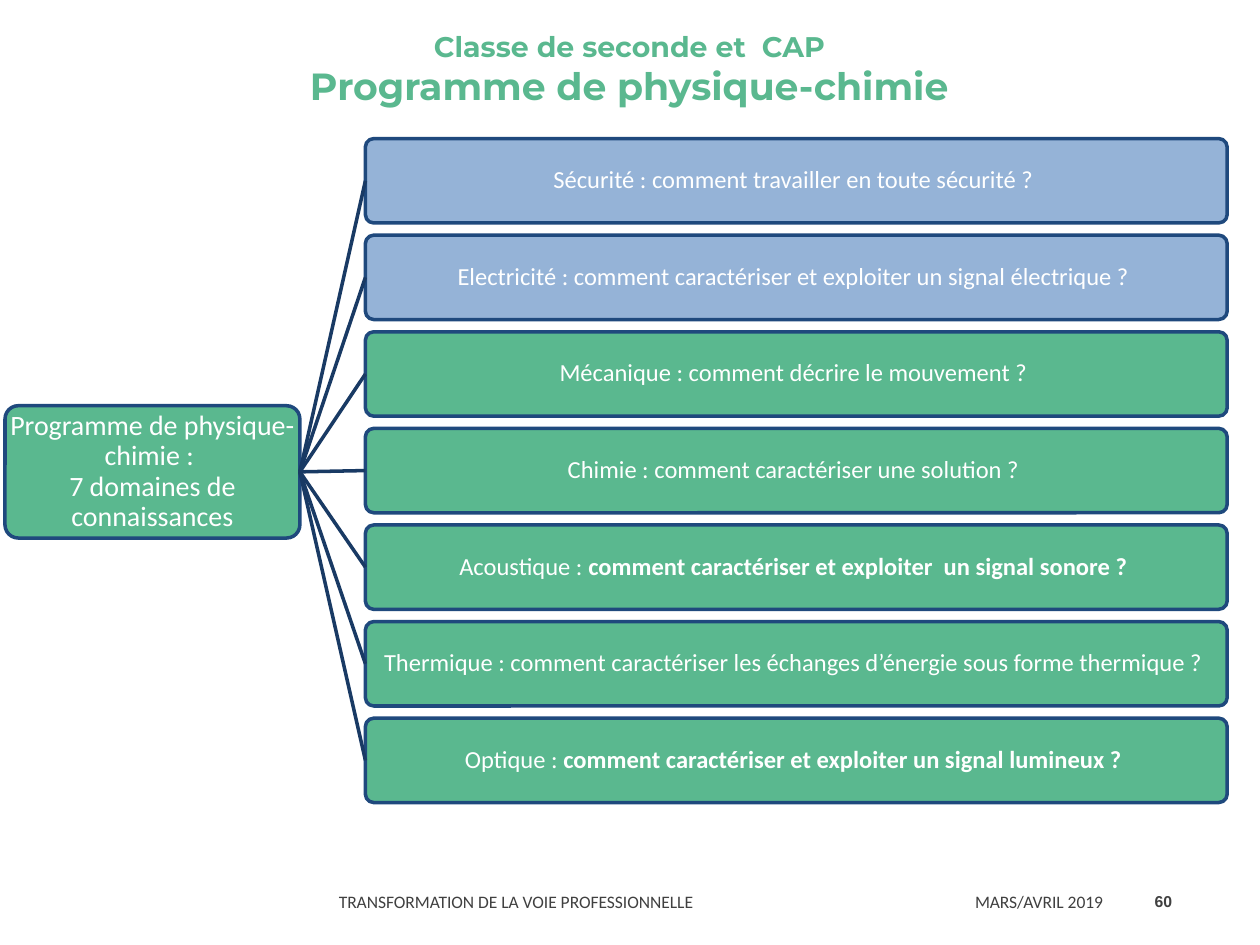
from lxml import etree
from pptx import Presentation
from pptx.dml.color import RGBColor
from pptx.enum.shapes import MSO_CONNECTOR as Connector, MSO_SHAPE as Shape
from pptx.enum.text import MSO_ANCHOR as Anchor, PP_ALIGN as Align
from pptx.oxml.ns import qn
from pptx.util import Inches, Pt

GREEN = RGBColor(0x5A, 0xB8, 0x8F)
BLUE = RGBColor(0x95, 0xB3, 0xD7)
NAVY = RGBColor(0x1F, 0x49, 0x7D)
DARK_NAVY = RGBColor(0x19, 0x3A, 0x64)
GREY = RGBColor(0x40, 0x40, 0x40)
WHITE = RGBColor(0xFF, 0xFF, 0xFF)

HUB_LINES = ["Programme de physique-chimie : ", "7 domaines de connaissances"]
# Fill, plain text, bold text
DOMAINS = [
    (BLUE, "Sécurité : comment travailler en toute sécurité ? ", ""),
    (BLUE, "Electricité : comment caractériser et exploiter un signal électrique ? ", ""),
    (GREEN, "Mécanique : comment décrire le mouvement ? ", ""),
    (GREEN, "Chimie : comment caractériser une solution ? ", ""),
    (GREEN, "Acoustique : ", "comment caractériser et exploiter  un signal sonore ? "),
    (GREEN, "Thermique : comment caractériser les échanges d’énergie sous forme thermique ? ", ""),
    (GREEN, "Optique : ", "comment caractériser et exploiter un signal lumineux ? "),
]
FIRST_TOP, LAST_TOP = 1.1, 5.7
PITCH = (LAST_TOP - FIRST_TOP) / (len(DOMAINS) - 1)
LEFT_SITE, RIGHT_SITE = 1, 3


class SlideBuilder:
    def __init__(self, page):
        self.page = page
        self.line_width = Pt(2)

    def add_span(self, para, text, color, **font_values):
        span = para.add_run()
        span.text = text
        span.font.color.rgb = color
        for name, value in font_values.items():
            setattr(span.font, name, value)

    def title(self, left, top, width, height, lines):
        """Fill the title placeholder; lines holds (text, size) pairs."""
        box = self.page.shapes.title
        box.left, box.top, box.width, box.height = map(Inches, (left, top, width, height))
        box.text_frame.vertical_anchor = Anchor.MIDDLE
        para = box.text_frame.paragraphs[0]
        para.alignment = Align.CENTER
        for index, (text, size) in enumerate(lines):
            if index:
                para.add_line_break()
            self.add_span(para, text, GREEN, name="Montserrat", size=Pt(size), bold=True)

    def rounded_box(self, left, top, width, height, fill):
        """Return the box and its empty centred paragraph."""
        box = self.page.shapes.add_shape(
            Shape.ROUNDED_RECTANGLE, *map(Inches, (left, top, width, height)))
        box.adjustments[0] = 0.1
        box.shadow.inherit = False
        box.fill.solid()
        box.fill.fore_color.rgb = fill
        box.line.color.rgb = NAVY
        box.line.width = self.line_width
        frame = box.text_frame
        frame.word_wrap = True
        frame.vertical_anchor = Anchor.MIDDLE
        for side in ("left", "right", "top", "bottom"):
            setattr(frame, f"margin_{side}", Inches(0.01))
        para = frame.paragraphs[0]
        para.alignment = Align.CENTER
        para.line_spacing = 0.9
        return box, para

    def hub(self, left, top, width, height, lines):
        box, para = self.rounded_box(left, top, width, height, GREEN)
        for index, text in enumerate(lines):
            if index:
                para.add_line_break()
            self.add_span(para, text, WHITE, name="Calibri", size=Pt(16))
        return box

    def domain(self, top, fill, plain, bold):
        box, para = self.rounded_box(2.9, top, 6.84, 0.67, fill)
        for text, is_bold in ((plain, False), (bold, True)):
            if text:
                self.add_span(para, text, WHITE, name="Calibri", size=Pt(14), bold=is_bold)
        return box

    def link(self, start, end):
        line = self.page.shapes.add_connector(Connector.STRAIGHT, 0, 0, 0, 0)
        line.begin_connect(start, RIGHT_SITE)
        line.end_connect(end, LEFT_SITE)
        line.line.color.rgb = DARK_NAVY
        line.line.width = self.line_width
        etree.SubElement(line._element.spPr, qn("a:effectLst"))

    def footer(self, left, top, width, height, text, align=Align.LEFT,
               spacing=None, **font_values):
        box = self.page.shapes.add_textbox(*map(Inches, (left, top, width, height)))
        box.text_frame.word_wrap = True
        box.text_frame.vertical_anchor = Anchor.MIDDLE
        para = box.text_frame.paragraphs[0]
        para.alignment = align
        para.line_spacing = spacing
        self.add_span(para, text, GREY, **font_values)


def main():
    deck = Presentation()
    deck.slide_width, deck.slide_height = Inches(10), Inches(7.5)
    builder = SlideBuilder(deck.slides.add_slide(deck.slide_layouts[5]))

    builder.title(0.24, 0.15, 9.51, 0.79, [
        ("Classe de seconde et  CAP", 16.2), ("Programme de physique-chimie", 21.6)])

    hub = builder.hub(0.04, 3.22, 2.34, 1.05, HUB_LINES)
    for index, (fill, plain, bold) in enumerate(DOMAINS):
        domain = builder.domain(FIRST_TOP + index * PITCH, fill, plain, bold)
        builder.link(hub, domain)

    footer_style = {"spacing": Pt(13.2), "name": "Calibri", "size": Pt(10)}
    builder.footer(2.59, 6.94, 5.05, 0.42,
                   "TRANSFORMATION DE LA VOIE PROFESSIONNELLE", **footer_style)
    builder.footer(7.64, 6.95, 1.27, 0.4, "MARS/AVRIL 2019", **footer_style)
    builder.footer(8.91, 6.95, 0.49, 0.4, "60", Align.RIGHT,
                   name="Arial", size=Pt(9), bold=True)
    deck.save("out.pptx")


if __name__ == "__main__":
    main()
